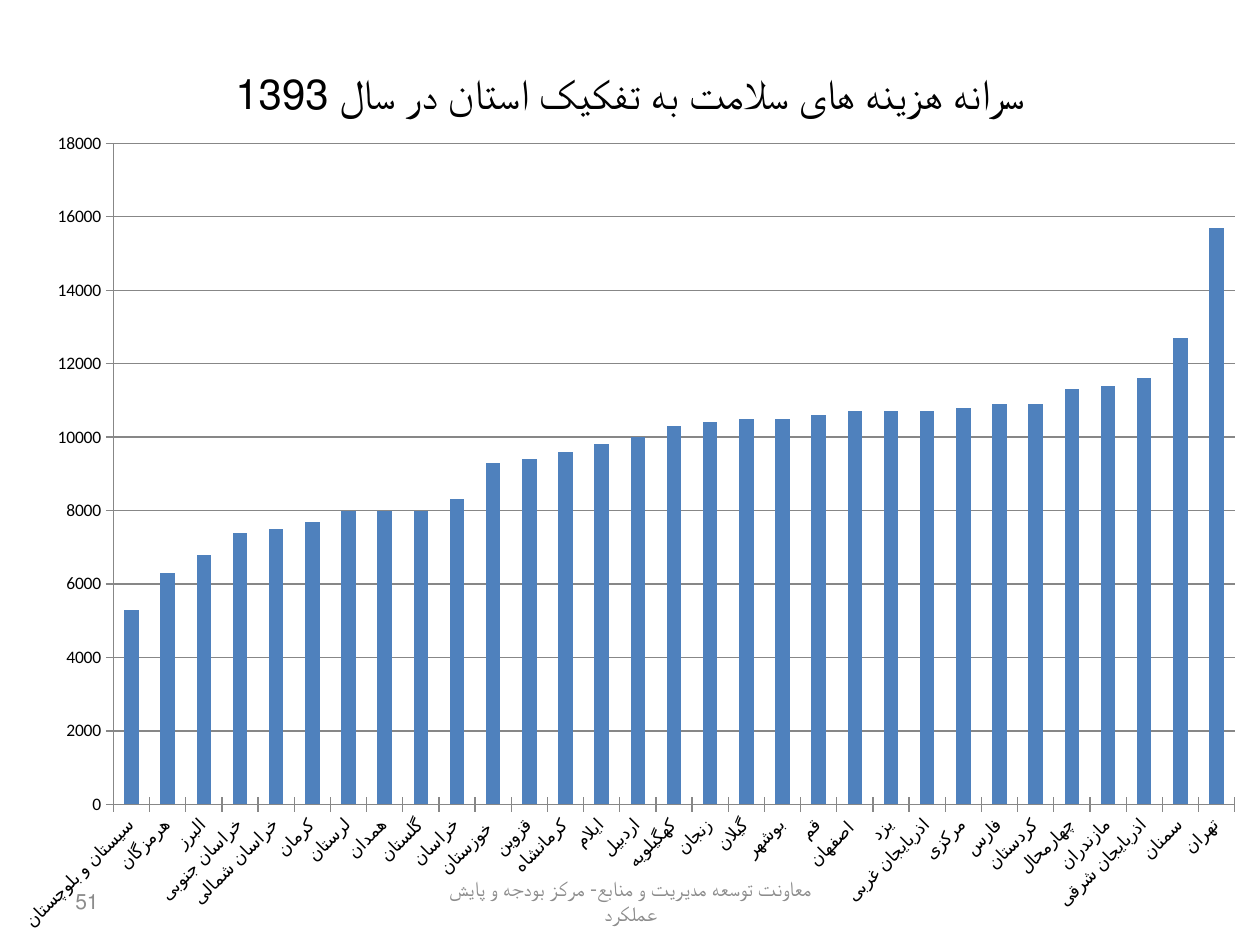
from lxml import etree
from pptx import Presentation
from pptx import util as u
from pptx.chart.data import CategoryChartData
from pptx.dml.color import RGBColor
from pptx.enum import chart as charts, text
from pptx.oxml import ns

FONT = "Calibri"
BLACK, GRAY, AXIS, BLUE = "000000", "8C8C8C", "878787", "4F81BD"
CENTER, LEFT = text.PP_ALIGN.CENTER, text.PP_ALIGN.LEFT

TEXTS = [
    ("سرانه هزینه های سلامت به تفکیک استان در سال 1393", (0.5, 0.3, 9, 0.87), 24, BLACK, CENTER),
    ("معاونت توسعه مدیریت و منابع- مرکز بودجه و پایش عملکرد", (3.42, 6.95, 3.17, 0.4), 12, GRAY, CENTER),
    ("51", (0.5, 6.95, 2.33, 0.4), 12, GRAY, LEFT),
]
COSTS = [
    ("سیستان و بلوچستان", 5300), ("هرمزگان", 6300), ("البرز", 6800),
    ("خراسان جنوبی", 7400), ("خراسان شمالی", 7500), ("کرمان", 7700),
    ("لرستان", 8000), ("همدان", 8000), ("گلستان", 8000), ("خراسان", 8300),
    ("خوزستان ", 9300), ("قزوین", 9400), ("کرمانشاه", 9600), ("ایلام", 9800),
    ("اردبیل", 10000), ("کهگیلویه", 10300), ("زنجان", 10400), ("گیلان", 10500),
    ("بوشهر", 10500), ("قم", 10600), ("اصفهان ", 10700), ("یزد", 10700),
    ("اذربایجان غربی", 10700), ("مرکزی", 10800), ("فارس", 10900),
    ("کردستان", 10900), ("چهارمحال", 11300), ("مازندران", 11400),
    ("اذربایجان شرقی", 11600), ("سمنان", 12700), ("تهران", 15700),
]
CHART_AREA = (0, 0.94, 10, 6.56)
PLOT = {"x": 0.09, "y": 0.03, "w": 0.89, "h": 0.8}


def color(value):
    return RGBColor.from_string(value)


def add_text(page, words, area, size, ink, align):
    box = page.shapes.add_textbox(*map(u.Inches, area))
    frame = box.text_frame
    frame.word_wrap = True
    frame.vertical_anchor = text.MSO_ANCHOR.MIDDLE
    para = frame.paragraphs[0]
    para.alignment = align
    para._p.get_or_add_pPr().set("rtl", "1")
    span = para.add_run()
    span.text = words
    span.font.size = u.Pt(size)
    span.font.name = FONT
    span.font.color.rgb = color(ink)


def place_plot(chart):
    area = chart._chartSpace.chart.plotArea
    for old in area.findall(ns.qn("c:layout")):
        area.remove(old)
    layout = etree.Element(ns.qn("c:layout"))
    manual = etree.SubElement(layout, ns.qn("c:manualLayout"))
    settings = [("layoutTarget", "inner"), ("xMode", "edge"), ("yMode", "edge")]
    for name, value in settings + list(PLOT.items()):
        etree.SubElement(manual, ns.qn("c:" + name)).set("val", str(value))
    area.insert(0, layout)


def add_cost_chart(page):
    data = CategoryChartData(number_format="0")
    data.categories = [province for province, cost in COSTS]
    data.add_series("Series 1", [cost for province, cost in COSTS])
    chart = page.shapes.add_chart(
        charts.XL_CHART_TYPE.COLUMN_CLUSTERED, *map(u.Inches, CHART_AREA), data).chart
    chart.has_legend = False
    chart.has_title = False
    chart.font.size = u.Pt(10)
    chart.font.name = FONT
    chart.font.color.rgb = color(BLACK)
    plot = chart.plots[0]
    plot.vary_by_categories = False
    plot.gap_width = 150
    fill = plot.series[0].format.fill
    fill.solid()
    fill.fore_color.rgb = color(BLUE)
    values = chart.value_axis
    values.minimum_scale, values.maximum_scale, values.major_unit = 0, 18000, 2000
    values.has_major_gridlines = True
    values.tick_labels.number_format = "0"
    values.tick_labels.number_format_is_linked = False
    for axis in (chart.category_axis, values):
        axis.major_tick_mark = charts.XL_TICK_MARK.CROSS
        axis.format.line.color.rgb = color(AXIS)
        axis.tick_labels.font.size = u.Pt(10)
    values.major_gridlines.format.line.color.rgb = color(AXIS)
    labels = chart.category_axis._element.find(ns.qn("c:txPr"))
    labels.find(ns.qn("a:bodyPr")).set("rot", "-2700000")
    place_plot(chart)


def main():
    deck = Presentation()
    deck.slide_width, deck.slide_height = u.Inches(10), u.Inches(7.5)
    page = deck.slides.add_slide(deck.slide_layouts[6])
    for entry in TEXTS:
        add_text(page, *entry)
    add_cost_chart(page)
    deck.save("out.pptx")


if __name__ == "__main__":
    main()
